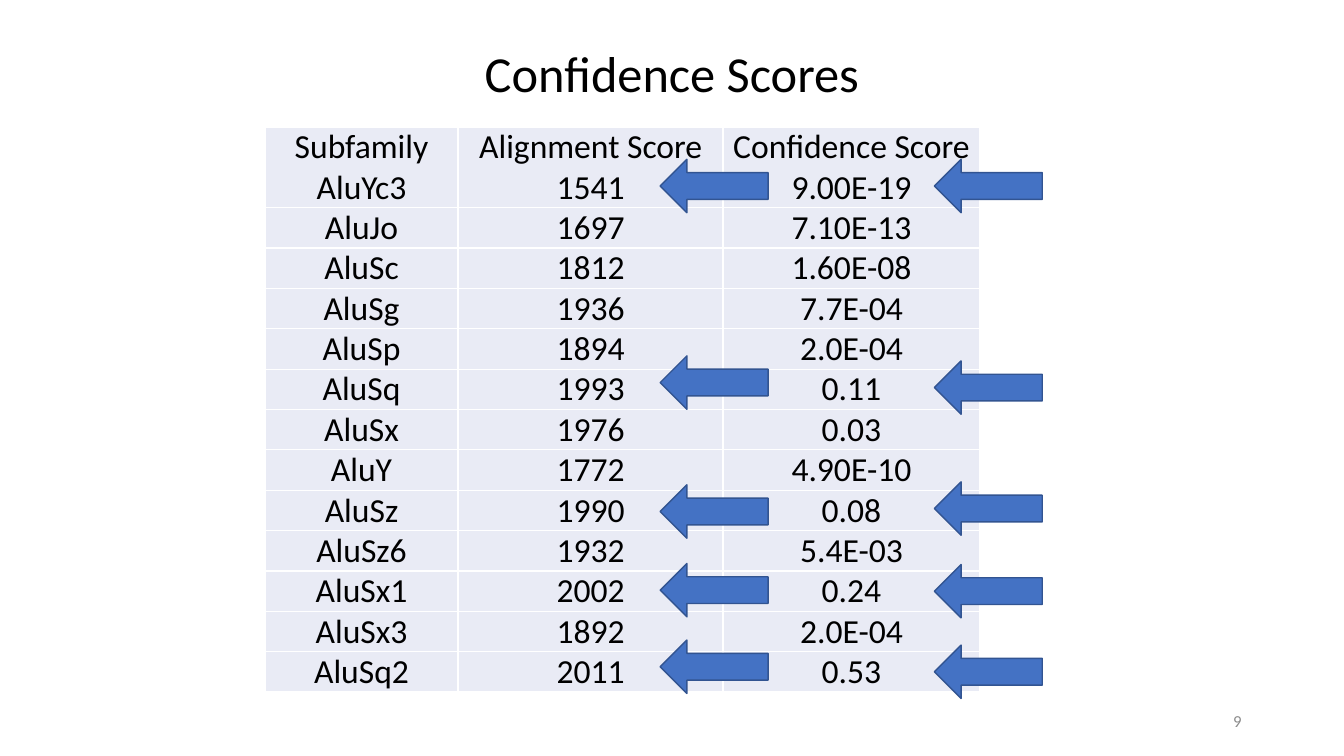
import dataclasses
import typing

import lxml.etree
import pptx
import pptx.dml.color
import pptx.enum.shapes
import pptx.enum.text
import pptx.oxml.ns
import pptx.util

Pt = pptx.util.Pt
Align = pptx.enum.text.PP_ALIGN
Anchor = pptx.enum.text.MSO_ANCHOR


@dataclasses.dataclass(frozen=True)
class Theme:
    font: str = "Calibri"
    text: str = "000000"
    muted: str = "8C8C8C"
    cell: str = "E9EBF5"
    border: str = "FFFFFF"
    arrow: str = "4472C4"
    arrow_line: str = "325491"
    title_size: float = 36
    table_size: float = 24
    number_size: float = 12
    line_width: float = 1


@dataclasses.dataclass(frozen=True)
class Label:
    text: str
    left: float
    top: float
    width: float
    height: float
    size: float
    color: str
    alignment: Align
    line_spacing: float = 1.0


@dataclasses.dataclass(frozen=True)
class ScoreTable:
    left: float
    column_widths: tuple[float, ...]
    rows: list[tuple[str, ...]]


@dataclasses.dataclass(frozen=True)
class ArrowColumn:
    left: float
    tops: tuple[float, ...]


THEME = Theme()
TABLE_TOP = 90.72
LINE_HEIGHT = 28.8
ARROW_WIDTH, ARROW_HEIGHT = 77.04, 38.16
CELL_FORMAT = {
    "vertical_anchor": Anchor.BOTTOM,
    "margin_left": Pt(5), "margin_right": Pt(5),
    "margin_top": Pt(0), "margin_bottom": Pt(0),
}

# The first row of each table holds the heading and the first value
SCORES = [
    ("Subfamily\nAluYc3", "Alignment Score\n1541", "Confidence Score\n9.00E-19"),
    ("AluJo", "1697", "7.10E-13"),
    ("AluSc", "1812", "1.60E-08"),
    ("AluSg", "1936", "7.7E-04"),
    ("AluSp", "1894", "2.0E-04"),
    ("AluSq", "1993", "0.11"),
    ("AluSx", "1976", "0.03"),
    ("AluY", "1772", "4.90E-10"),
    ("AluSz", "1990", "0.08"),
    ("AluSz6", "1932", "5.4E-03"),
    ("AluSx1", "2002", "0.24"),
    ("AluSx3", "1892", "2.0E-04"),
    ("AluSq2", "2011", "0.53"),
]
LABELS = [
    Label("Confidence Scores", 66, 28.8, 828, 51.84,
          THEME.title_size, THEME.text, Align.CENTER, 0.9),
    Label("9", 678, 500.4, 216, 28.8,
          THEME.number_size, THEME.muted, Align.RIGHT),
]
TABLES = [
    ScoreTable(189.36, (137.8, 189.6), [row[:2] for row in SCORES]),
    ScoreTable(516.4, (183.6,), [row[2:] for row in SCORES]),
]
ARROW_COLUMNS = [
    ArrowColumn(667.44, (113.8, 257.8, 344.2, 403.2, 460.8)),
    ArrowColumn(471.6, (113.8, 254.2, 346.3, 402.5, 457.2)),
]


def rgb(color: str) -> pptx.dml.color.RGBColor:
    return pptx.dml.color.RGBColor.from_string(color)


def apply_format(target: typing.Any, values: dict[str, typing.Any]) -> None:
    for name, value in values.items():
        setattr(target, name, value)


def write_text(text_frame: typing.Any, text: str, size: float, color: str,
               alignment: Align, line_spacing: float = 1.0) -> None:
    text_frame.text = text
    for paragraph in text_frame.paragraphs:
        apply_format(paragraph, {"alignment": alignment, "line_spacing": line_spacing})
        for run in paragraph.runs:
            apply_format(run.font, {"name": THEME.font, "size": Pt(size), "bold": False})
            run.font.color.rgb = rgb(color)


def add_label(slide: typing.Any, label: Label) -> None:
    shape = slide.shapes.add_textbox(
        Pt(label.left), Pt(label.top), Pt(label.width), Pt(label.height))
    apply_format(shape.text_frame, {"word_wrap": True, "vertical_anchor": Anchor.MIDDLE})
    write_text(shape.text_frame, label.text, label.size, label.color,
               label.alignment, label.line_spacing)


def add_borders(cell: typing.Any) -> None:
    qualified = pptx.oxml.ns.qn
    properties = cell._tc.get_or_add_tcPr()
    for side in ("a:lnL", "a:lnR", "a:lnT", "a:lnB"):
        line = lxml.etree.SubElement(
            properties, qualified(side), w=str(int(Pt(THEME.line_width))))
        fill = lxml.etree.SubElement(line, qualified("a:solidFill"))
        lxml.etree.SubElement(fill, qualified("a:srgbClr"), val=THEME.border)


def add_score_table(slide: typing.Any, score_table: ScoreTable) -> None:
    heights = [LINE_HEIGHT * len(row[0].splitlines()) for row in score_table.rows]
    # Both tables share line breaks, so the heading row is always two lines high
    table = slide.shapes.add_table(
        len(score_table.rows), len(score_table.column_widths),
        Pt(score_table.left), Pt(TABLE_TOP),
        Pt(sum(score_table.column_widths)), Pt(sum(heights))).table
    apply_format(table, {"first_row": False, "horz_banding": False})
    for column, width in zip(table.columns, score_table.column_widths):
        column.width = Pt(width)
    for row, height, texts in zip(table.rows, heights, score_table.rows):
        row.height = Pt(height)
        for cell, text in zip(row.cells, texts):
            apply_format(cell, CELL_FORMAT)
            add_borders(cell)
            cell.fill.solid()
            cell.fill.fore_color.rgb = rgb(THEME.cell)
            write_text(cell.text_frame, text, THEME.table_size, THEME.text, Align.CENTER)


def add_arrow(slide: typing.Any, left: float, top: float) -> None:
    shape = slide.shapes.add_shape(
        pptx.enum.shapes.MSO_SHAPE.LEFT_ARROW,
        Pt(left), Pt(top), Pt(ARROW_WIDTH), Pt(ARROW_HEIGHT))
    shape.shadow.inherit = False
    shape.fill.solid()
    shape.fill.fore_color.rgb = rgb(THEME.arrow)
    shape.line.color.rgb = rgb(THEME.arrow_line)
    shape.line.width = Pt(THEME.line_width)


def main() -> None:
    presentation = pptx.Presentation()
    apply_format(presentation, {"slide_width": Pt(960), "slide_height": Pt(540)})
    slide = presentation.slides.add_slide(presentation.slide_layouts[6])

    # Title and slide number
    for label in LABELS:
        add_label(slide, label)

    # Score tables, side by side
    for score_table in TABLES:
        add_score_table(slide, score_table)

    # Arrows at the highlighted rows
    for column in ARROW_COLUMNS:
        for top in column.tops:
            add_arrow(slide, column.left, top)

    presentation.save("out.pptx")


if __name__ == "__main__":
    main()
